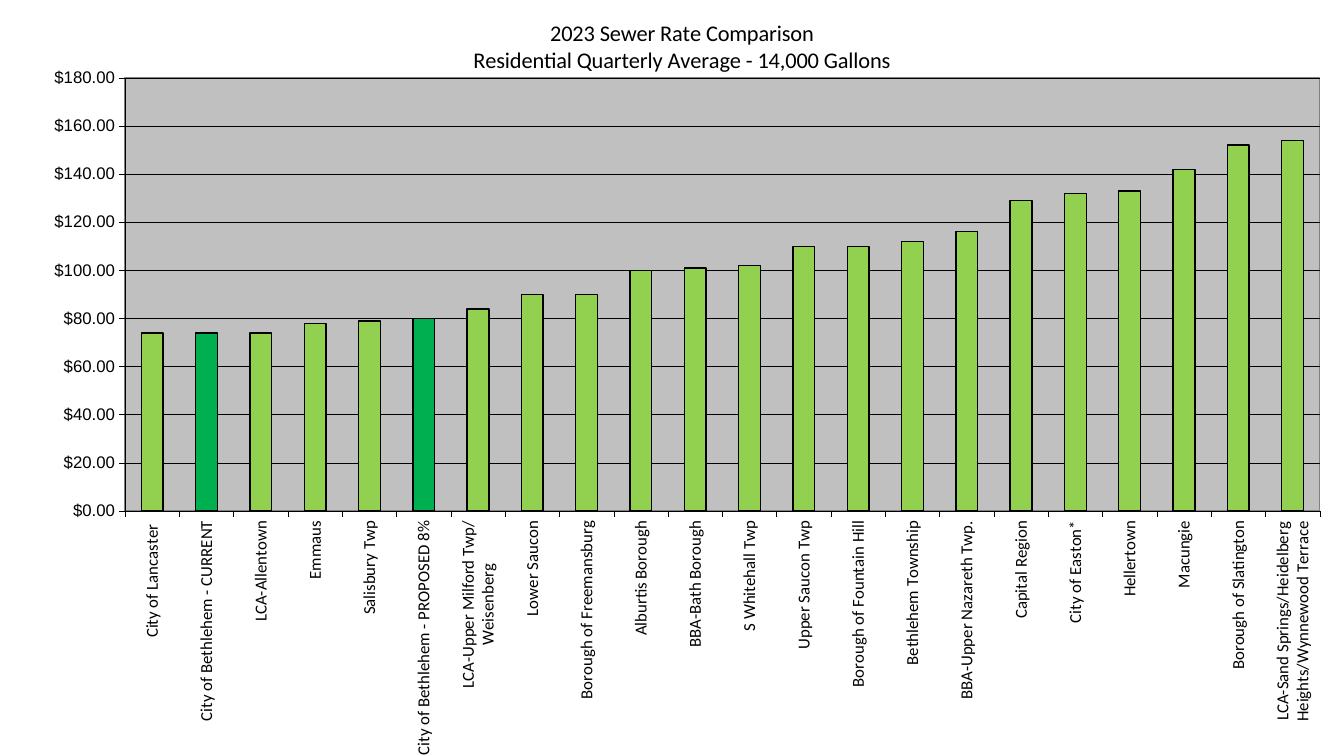
from lxml import etree
from pptx import Presentation
from pptx.chart.data import CategoryChartData
from pptx.dml.color import RGBColor
from pptx.enum.chart import XL_CHART_TYPE, XL_TICK_MARK
from pptx.oxml import parse_xml
from pptx.oxml.ns import nsdecls, qn
from pptx.util import Emu, Pt

COLUMNS = XL_CHART_TYPE.COLUMN_CLUSTERED
TICK_OUT, TICK_NONE = XL_TICK_MARK.OUTSIDE, XL_TICK_MARK.NONE
EMU_PER_PX = 9525
WIDTH, HEIGHT = 1280, 720
DOLLARS = '"$"#,##0.00'

TITLE = "2023 Sewer Rate Comparison\nResidential Quarterly Average - 14,000 Gallons"
RATES = [
    ("City of Lancaster ", 74),
    ("City of Bethlehem - CURRENT", 74),
    ("LCA-Allentown", 74),
    ("Emmaus", 78),
    ("Salisbury Twp", 79),
    ("City of Bethlehem - PROPOSED 8%", 80),
    ("LCA-Upper Milford Twp/\nWeisenberg", 84),
    ("Lower Saucon", 90),
    ("Borough of Freemansburg", 90),
    ("Alburtis Borough", 100),
    ("BBA-Bath Borough", 101),
    ("S Whitehall Twp", 102),
    ("Upper Saucon Twp", 110),
    ("Borough of Fountain Hill", 110),
    ("Bethlehem Township", 112),
    ("BBA-Upper Nazareth Twp.", 116),
    ("Capital Region", 129),
    ("City of Easton*", 132),
    ("Hellertown", 133),
    ("Macungie", 142),
    ("Borough of Slatington", 152),
    ("LCA-Sand Springs/Heidelberg\nHeights/Wynnewood Terrace", 154),
]


def px(length):
    return Emu(length * EMU_PER_PX)


def color(hex_string):
    return RGBColor.from_string(hex_string)


def set_values(target, values):
    for name, value in values.items():
        setattr(target, name, value)


class RateSlide:
    """Style of the rate chart and the slide it stands on."""

    ink, bar, own_city, plot_grey, border = "000000", "92D050", "00B050", "C0C0C0", "808080"

    def __init__(self, deck):
        self.slide = deck.slides.add_slide(deck.slide_layouts[6])

    def font(self, font, name, size):
        set_values(font, {"name": name, "size": Pt(size), "bold": False})
        font.color.rgb = color(self.ink)

    def line(self, line, width):
        line.color.rgb = color(self.ink)
        line.width = Pt(width)

    def place(self, parent, index, **position):
        """Give a chart part a manual layout, in fractions of the chart."""
        for old in parent.findall(qn("c:layout")):
            parent.remove(old)
        layout = parse_xml(f"<c:layout {nsdecls('c')}><c:manualLayout/></c:layout>")
        for tag, value in position.items():
            etree.SubElement(layout[0], qn(f"c:{tag}")).set("val", str(value))
        parent.insert(index, layout)

    def chart(self, left, top, width, height, rates):
        data = CategoryChartData(number_format=DOLLARS)
        data.categories = [place for place, _ in rates]
        data.add_series("Series 1", [rate for _, rate in rates])
        frame = self.slide.shapes.add_chart(
            COLUMNS, px(left), px(top), px(width), px(height), data)
        chart = frame.chart
        chart.has_legend = False
        self.font(chart.font, "Arial", 10)
        return chart

    def title(self, chart, text):
        frame = chart.chart_title.text_frame
        frame.text = text
        for paragraph in frame.paragraphs:
            self.font(paragraph.runs[0].font, "Calibri", 16)
        self.place(chart.chart_title.element, 1,
                   xMode="edge", yMode="edge", x=0.35, y=0.02)

    def axis(self, axis, font_name, **values):
        set_values(axis, {"major_tick_mark": TICK_OUT, "minor_tick_mark": TICK_NONE, **values})
        self.line(axis.format.line, 0.25)
        self.font(axis.tick_labels.font, font_name, 12)
        if axis.has_major_gridlines:
            self.line(axis.major_gridlines.format.line, 0.25)

    def upright_labels(self, chart):
        label_text = chart.element.find(f".//{qn('c:catAx')}/{qn('c:txPr')}")
        label_body = label_text.find(qn("a:bodyPr"))
        label_body.set("rot", "-5400000")
        label_body.set("vert", "horz")

    def bars(self, plot, highlighted):
        set_values(plot, {"gap_width": 150, "vary_by_categories": False})
        series = plot.series[0]
        series.invert_if_negative = False
        formats = [(series.format, self.bar)]
        formats += [(series.points[i].format, self.own_city) for i in highlighted]
        for bar_format, fill in formats:
            bar_format.fill.solid()
            bar_format.fill.fore_color.rgb = color(fill)
            self.line(bar_format.line, 1)

    def plot_area(self, chart):
        area = chart.element.find(".//" + qn("c:plotArea"))
        self.place(area, 0, layoutTarget="inner", xMode="edge", yMode="edge",
                   x=0.093, y=0.103, w=0.889, h=0.573)
        area.append(parse_xml(
            f'<c:spPr {nsdecls("c", "a")}>'
            f'<a:solidFill><a:srgbClr val="{self.plot_grey}"/></a:solidFill>'
            f'<a:ln w="12700"><a:solidFill><a:srgbClr val="{self.border}"/></a:solidFill></a:ln>'
            '</c:spPr>'))


def main():
    deck = Presentation()
    set_values(deck, {"slide_width": px(WIDTH), "slide_height": px(HEIGHT)})
    page = RateSlide(deck)

    # Chart and title
    chart = page.chart(0, 0, WIDTH, HEIGHT, RATES)
    page.title(chart, TITLE)

    # Axes, with upright place names
    places, dollars = chart.category_axis, chart.value_axis
    page.axis(places, "Calibri", has_major_gridlines=False)
    page.upright_labels(chart)
    page.axis(dollars, "Arial", has_major_gridlines=True,
              minimum_scale=0, maximum_scale=180, major_unit=20)
    set_values(dollars.tick_labels,
               {"number_format": DOLLARS, "number_format_is_linked": False})

    # Bars, with the city's own rates picked out
    own_rates = [i for i, (place, _) in enumerate(RATES)
                 if place.startswith("City of Bethlehem")]
    page.bars(chart.plots[0], own_rates)
    page.plot_area(chart)

    deck.save("out.pptx")


if __name__ == "__main__":
    main()
